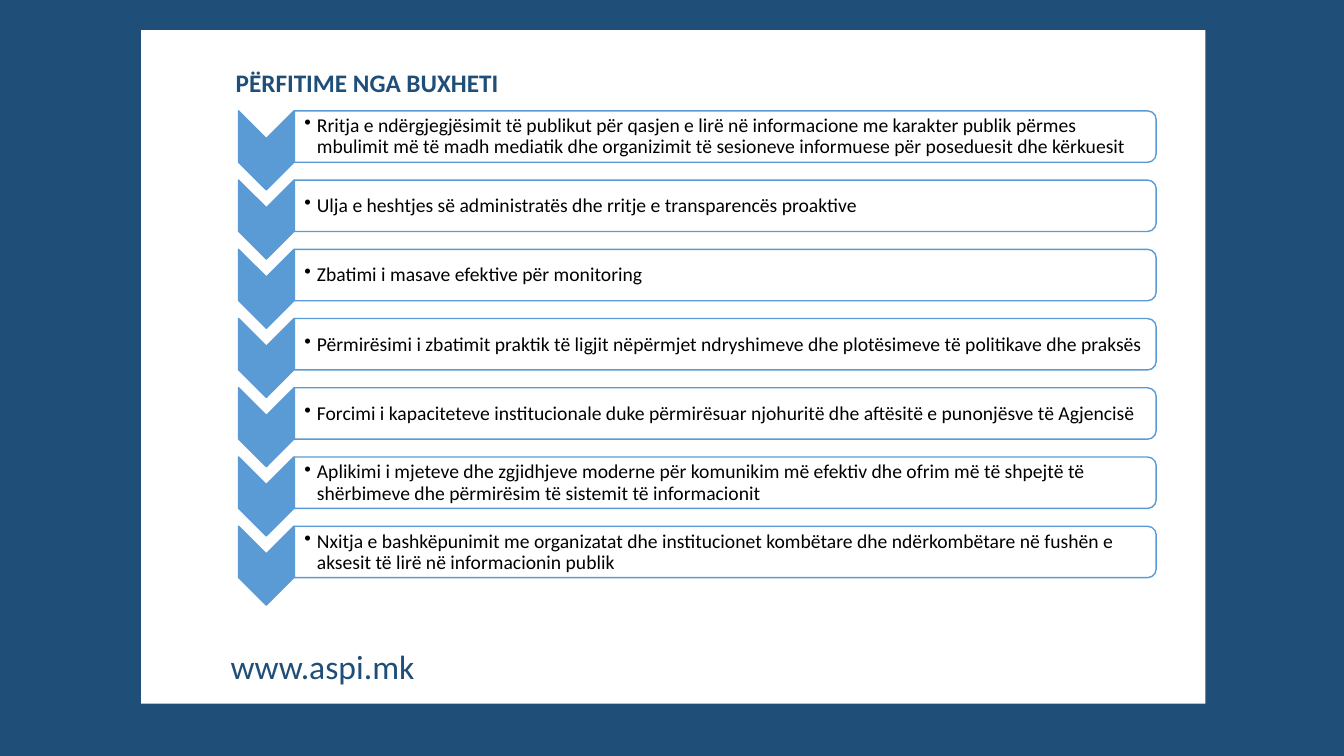
"""Build a slide listing seven budget benefits beside a column of chevrons."""
from dataclasses import dataclass

from lxml import etree
from pptx import Presentation
from pptx.dml.color import RGBColor
from pptx.enum.shapes import MSO_SHAPE
from pptx.enum.text import MSO_ANCHOR, MSO_AUTO_SIZE
from pptx.oxml.ns import qn
from pptx.shapes.autoshape import Shape
from pptx.slide import Slide
from pptx.util import Pt

RECTANGLE = MSO_SHAPE.RECTANGLE
CHEVRON = MSO_SHAPE.CHEVRON
ROUNDED_END = MSO_SHAPE.ROUND_2_SAME_RECTANGLE
MIDDLE = MSO_ANCHOR.MIDDLE
GROW = MSO_AUTO_SIZE.SHAPE_TO_FIT_TEXT

COLOURS = {"navy": "1F4E79", "blue": "5B9BD5", "white": "FFFFFF", "black": "000000"}
ROW_PITCH = 49.45
HEADING_FORMAT = {"name": "Calibri", "size": Pt(18), "bold": True}
ADDRESS_FORMAT = {"name": "Calibri", "size": Pt(24), "bold": False}
BENEFIT_FORMAT = {"name": "Calibri", "size": Pt(14), "bold": False}
BENEFIT_FRAME = {
    "word_wrap": True, "vertical_anchor": MIDDLE, "margin_left": Pt(7.84),
    "margin_top": Pt(0.7), "margin_right": Pt(0.7), "margin_bottom": Pt(0.7),
}
LABEL_FRAME = {"word_wrap": False, "auto_size": GROW}

BENEFITS = [
    "Rritja e ndërgjegjësimit të publikut për qasjen e lirë në informacione me karakter publik "
    "përmes mbulimit më të madh mediatik dhe organizimit të sesioneve informuese për poseduesit "
    "dhe kërkuesit",
    "Ulja e heshtjes së administratës dhe rritje e transparencës proaktive",
    "Zbatimi i masave efektive për monitoring",
    "Përmirësimi i zbatimit praktik të ligjit nëpërmjet ndryshimeve dhe plotësimeve të "
    "politikave dhe praksës",
    "Forcimi i kapaciteteve institucionale duke përmirësuar njohuritë dhe aftësitë e "
    "punonjësve të Agjencisë",
    "Aplikimi i mjeteve dhe zgjidhjeve moderne për komunikim më efektiv dhe ofrim më të shpejtë "
    "të shërbimeve dhe përmirësim të sistemit të informacionit",
    "Nxitja e bashkëpunimit me organizatat dhe institucionet kombëtare dhe ndërkombëtare në "
    "fushën e aksesit të lirë në informacionin publik",
]


@dataclass(frozen=True)
class Area:
    left: float
    top: float
    width: float
    height: float

    def lengths(self, drop: float = 0) -> tuple[Pt, Pt, Pt, Pt]:
        return Pt(self.left), Pt(self.top + drop), Pt(self.width), Pt(self.height)


@dataclass(frozen=True)
class Panel:
    kind: MSO_SHAPE
    area: Area
    fill: str
    line: str | None = None
    rotation: float = 0
    opacity: int = 100


@dataclass(frozen=True)
class Label:
    text: str
    area: Area
    colour: str
    font: dict
    frame: dict
    bulleted: bool = False


BACKDROP = [
    Panel(RECTANGLE, Area(0, 0, 960, 540), "navy"),
    Panel(RECTANGLE, Area(100.8, 21.6, 760.32, 480.96), "white"),
]
ROW_PANELS = [
    Panel(CHEVRON, Area(162, 87.6, 56.4, 39.6), "blue", "blue", 90),
    Panel(ROUNDED_END, Area(499.68, -210.24, 36.72, 615.6), "white", "blue", 90, 90),
]
BENEFIT_AREA = Area(209.52, 81.36, 614.16, 33.12)
LABELS = [
    Label("www.aspi.mk", Area(157.68, 457.92, 146.88, 36), "navy", ADDRESS_FORMAT, LABEL_FRAME),
    Label("PËRFITIME NGA BUXHETI", Area(161.28, 44.64, 203.76, 28.8), "navy",
          HEADING_FORMAT, LABEL_FRAME),
]


def rgb(name: str) -> RGBColor:
    return RGBColor.from_string(COLOURS[name])


def set_values(target: object, values: dict) -> None:
    for name, value in values.items():
        setattr(target, name, value)


def draw_panel(page: Slide, panel: Panel, drop: float = 0) -> Shape:
    shape = page.shapes.add_shape(panel.kind, *panel.area.lengths(drop))
    shape.shadow.inherit = False
    shape.rotation = panel.rotation
    shape.fill.solid()
    shape.fill.fore_color.rgb = rgb(panel.fill)
    if panel.opacity < 100:
        colour = shape.fill._xPr.find(qn("a:solidFill")).find(qn("a:srgbClr"))
        etree.SubElement(colour, qn("a:alpha"), val=str(panel.opacity * 1000))
    if panel.line:
        shape.line.color.rgb = rgb(panel.line)
        shape.line.width = Pt(1)
    else:
        shape.line.fill.background()
    return shape


def draw_label(page: Slide, label: Label, drop: float = 0) -> Shape:
    box = page.shapes.add_textbox(*label.area.lengths(drop))
    set_values(box.text_frame, label.frame)
    para = box.text_frame.paragraphs[0]
    if label.bulleted:
        para.level = 1
        para.line_spacing = 0.9
        properties = para._p.get_or_add_pPr()
        properties.set("marL", str(Pt(9)))
        properties.set("indent", str(Pt(-9)))
        etree.SubElement(properties, qn("a:buChar"), char="•")
    span = para.add_run()
    span.text = label.text
    set_values(span.font, label.font)
    span.font.color.rgb = rgb(label.colour)
    return box


def main() -> None:
    deck = Presentation()
    set_values(deck, {"slide_width": Pt(960), "slide_height": Pt(540)})
    page = deck.slides.add_slide(deck.slide_layouts[6])
    for panel in BACKDROP:
        draw_panel(page, panel)
    for label in LABELS:
        draw_label(page, label)
    for row, benefit in enumerate(BENEFITS):
        drop = row * ROW_PITCH
        for panel in ROW_PANELS:
            draw_panel(page, panel, drop)
        draw_label(page, Label(benefit, BENEFIT_AREA, "black", BENEFIT_FORMAT,
                               BENEFIT_FRAME, True), drop)
    deck.save("out.pptx")


if __name__ == "__main__":
    main()
